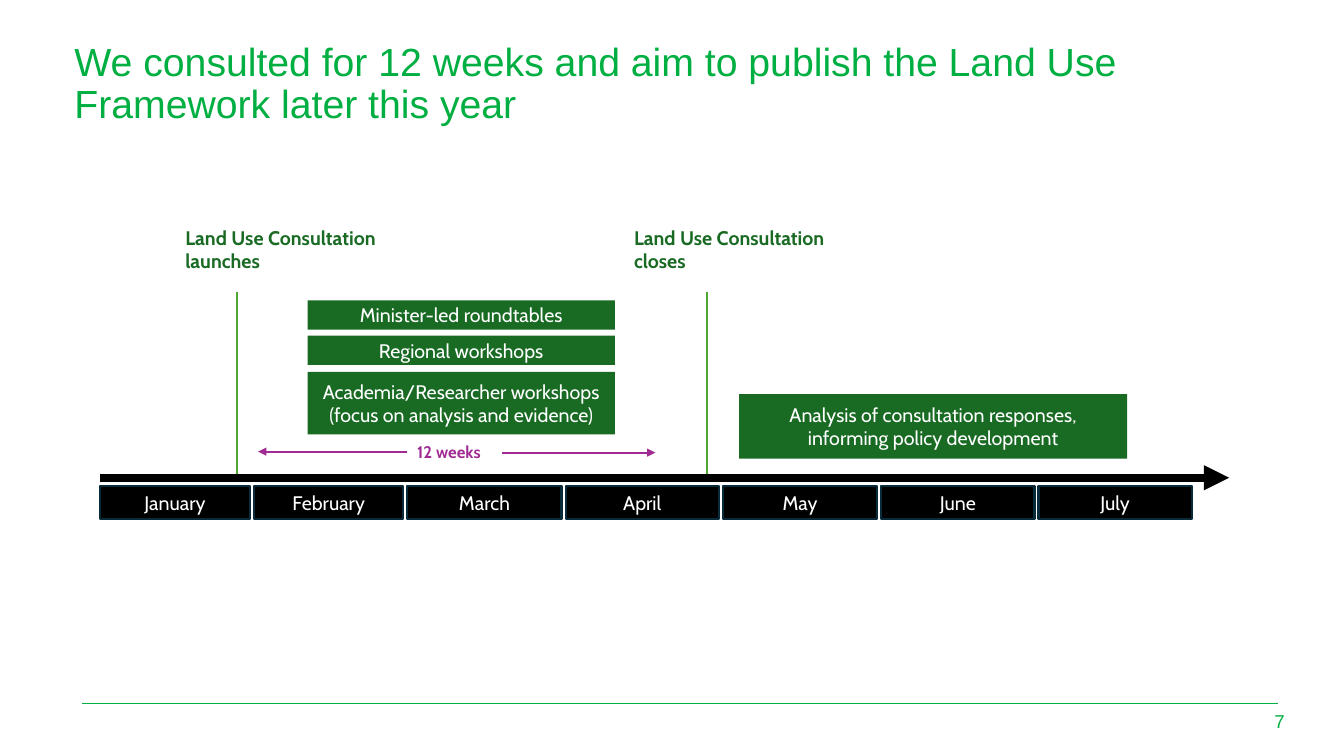
import pptx
import pptx.util
import pptx.dml.color
import pptx.enum.shapes
import pptx.enum.text
import pptx.oxml
from dataclasses import dataclass

PX = 9144  # EMU per px, 100 px to the inch
ALIGN = pptx.enum.text.PP_ALIGN
ANCHOR = pptx.enum.text.MSO_ANCHOR
NS = 'xmlns:a="http://schemas.openxmlformats.org/drawingml/2006/main"'


@dataclass(frozen=True)
class Theme:
    brand: str = "00AF41"
    dark: str = "196B24"
    mark: str = "4EA72E"
    span: str = "A02B93"
    black: str = "000000"
    edge: str = "092A39"
    white: str = "FFFFFF"
    head: str = "Arial"
    body: str = "Cabin"
    title: float = 28
    label: float = 14
    small: float = 12
    page: float = 13.3


THEME = Theme()


def emu(*nums):
    return [pptx.util.Emu(n * PX) for n in nums]


def rgb(code):
    return pptx.dml.color.RGBColor.from_string(code)


def write(shape, text, size, color, font=THEME.body, bold=False,
          align=ALIGN.LEFT, anchor=ANCHOR.TOP, wrap=True, space=1.0):
    frame = shape.text_frame
    frame.text = text
    frame.word_wrap = wrap
    frame.vertical_anchor = anchor
    for para in frame.paragraphs:
        para.alignment = align
        para.line_spacing = space
        for run in para.runs:
            run.font.name = font
            run.font.size = pptx.util.Pt(size)
            run.font.bold = bold
            run.font.color.rgb = rgb(color)


def note(slide, box, text, size, color, **style):
    shape = slide.shapes.add_textbox(*emu(*box))
    write(shape, text, size, color, **style)
    return shape


def block(slide, box, text, fill, edge=None):
    kind = pptx.enum.shapes.MSO_SHAPE.RECTANGLE
    shape = slide.shapes.add_shape(kind, *emu(*box))
    shape.shadow.inherit = False
    shape.fill.solid()
    shape.fill.fore_color.rgb = rgb(fill)
    if edge:
        shape.line.color.rgb = rgb(edge)
        shape.line.width = pptx.util.Pt(1.5)
    else:
        shape.line.fill.background()
    write(shape, text, THEME.label, THEME.white,
          align=ALIGN.CENTER, anchor=ANCHOR.MIDDLE)


def rule(slide, start, end, color, width, arrow=False):
    kind = pptx.enum.shapes.MSO_CONNECTOR.STRAIGHT
    line = slide.shapes.add_connector(kind, *emu(*start, *end))
    line.line.color.rgb = rgb(color)
    line.line.width = pptx.util.Pt(width)
    if arrow:
        tail = pptx.oxml.parse_xml(f'<a:tailEnd {NS} type="triangle"/>')
        line.line._get_or_add_ln().append(tail)
    line._element.spPr.append(pptx.oxml.parse_xml(f"<a:effectLst {NS}/>"))
    return line


def header(slide, box):
    note(slide, box, "We consulted for 12 weeks and aim to publish the "
         "Land Use Framework later this year", THEME.title, THEME.brand,
         font=THEME.head, space=0.9)


def footer(slide, box):
    left, top, width, height = box
    rule(slide, (left, top), (left + width, top), THEME.brand, 0.5)
    note(slide, (left + width - 44, top - 3, 60, height), "7",
         THEME.page, THEME.brand, font=THEME.head,
         align=ALIGN.RIGHT, anchor=ANCHOR.MIDDLE)


def months(slide, box):
    left, top, width, height = box
    names = ["January", "February", "March", "April", "May", "June", "July"]
    edges = [0, 153, 305, 462, 618, 775, 931, width + 4]
    for name, start, end in zip(names, edges, edges[1:]):
        block(slide, (left + start, top, end - start - 4, height),
              name, THEME.black, THEME.edge)


def events(slide, box):
    left, top, width, height = box
    # Text offset, text width, marker offset, wording
    dates = [(75, 263, 136, "launches"), (520, 226, 602, "closes")]
    for start, wide, mark, word in dates:
        note(slide, (left + start, top, wide, 57),
             f"Land Use Consultation {word}", THEME.label, THEME.dark,
             bold=True)
        rule(slide, (left + mark, top + height), (left + mark, top + 71),
             THEME.mark, 1.5)


def tasks(slide, box):
    left, top, width, height = box
    # Work during the consultation
    rows = [(0, 29, "Minister-led roundtables"),
            (35, 29, "Regional workshops"),
            (71, 62, "Academia/Researcher workshops\n"
                     "(focus on analysis and evidence)")]
    for drop, tall, text in rows:
        block(slide, (left, top + drop, 305, tall), text, THEME.dark)
    # Work after it closes
    block(slide, (left + width - 385, top + height - 64, 385, 64),
          "Analysis of consultation responses, informing policy development",
          THEME.dark)


def period(slide, box):
    left, top, width, height = box
    mid = top + height // 2
    label = note(slide, (left + 148, top, 90, height), "12 weeks",
                 THEME.small, THEME.span, bold=True, wrap=False)
    back = rule(slide, (left + 148, mid), (left, mid), THEME.span, 1.5, True)
    back.begin_connect(label, 1)
    rule(slide, (left + 242, mid + 1), (left + width, mid + 1),
         THEME.span, 1.5, True)


def timeline(slide, box):
    left, top, width, height = box
    axis = top + 255
    events(slide, (left, top, width, 255))
    months(slide, (left, top + 263, 1083, 33))
    period(slide, (left + 157, top + 214, 394, 30))
    rule(slide, (left, axis), (left + width, axis), THEME.black, 6, True)
    tasks(slide, (left + 206, top + 79, 813, 157))


def main():
    deck = pptx.Presentation()
    deck.slide_width, deck.slide_height = emu(1333, 750)
    slide = deck.slides.add_slide(deck.slide_layouts[6])
    footer(slide, (81, 698, 1187, 40))
    header(slide, (64, 37, 1205, 53))
    timeline(slide, (99, 219, 1120, 296))
    deck.save("out.pptx")


if __name__ == "__main__":
    main()
